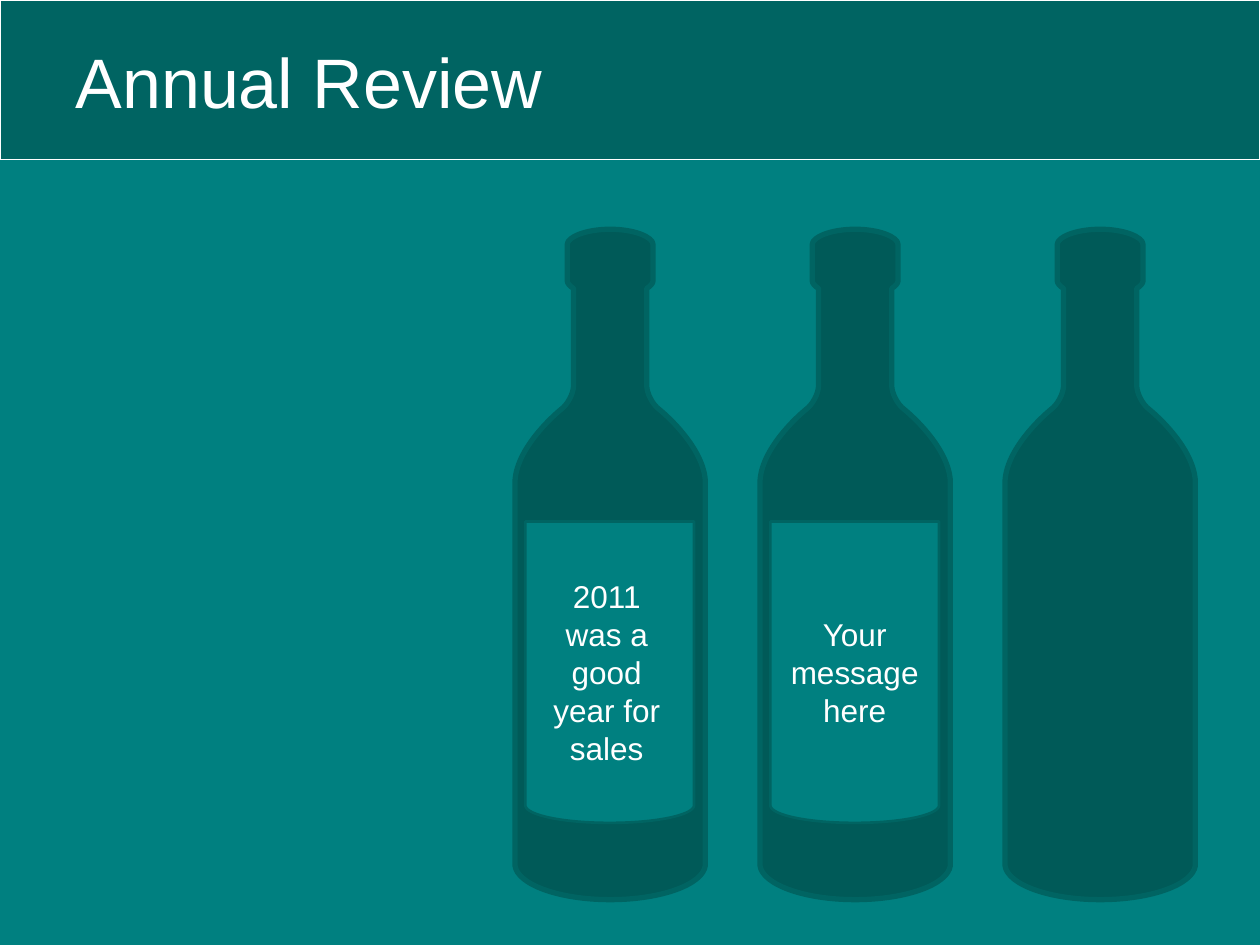
from lxml import etree
from pptx import Presentation
from pptx.dml.color import RGBColor
from pptx.enum import shapes, text
from pptx.oxml.ns import qn
from pptx.util import Pt

TEAL = RGBColor(0x00, 0x80, 0x80)
BAND = RGBColor(0x00, 0x64, 0x62)
GLASS = RGBColor(0x00, 0x5A, 0x58)
WHITE = RGBColor(0xFF, 0xFF, 0xFF)

# Right halves, as (distance from axis, y): one point is a line, three are a curve.
BOTTLE = [
    [(0, 131)],
    [(13.7, 131), (24.5, 135.4), (24.5, 139.7)],
    [(24.5, 160.5)],
    [(24.5, 162), (23, 163.5), (20.9, 164.9)],
    [(20.9, 220.3)],
    [(20.9, 224.6), (24.1, 231.1), (28.1, 234)],
    [(28.1, 234), (53.3, 254.2), (54.4, 275)],
    [(54.4, 494.6)],
    [(53, 505.4), (29.2, 514.1), (0, 514.1)],
]
LABEL = [
    [(0, 298)],
    [(48.2, 298)],
    [(48.2, 460.4)],
    [(47.5, 465.8), (26.6, 470.2), (0, 470.2)],
]
FIRST_AXIS, AXIS_STEP = 348.7, 140


def add_symmetric(page, axis, half, fill, line_width):
    """Draw the outline made of a right half and its mirror image."""
    mirrored = []
    for before, segment in reversed(list(zip(half, half[1:]))):
        back = [*reversed(segment[:-1]), before[-1]]
        mirrored.append([(-x, y) for x, y in back])
    segments = [[(Pt(axis + x), Pt(y)) for x, y in segment]
                for segment in half + mirrored]
    ends = [segment[-1] for segment in segments]
    builder = page.shapes.build_freeform(*ends[0])
    builder.add_line_segments(ends[1:], close=True)
    shape = builder.convert_to_shape()

    # Turn the straight steps with control points into Bezier curves
    steps = list(shape._element.iter(qn("a:lnTo")))
    for step, segment in zip(steps, segments[1:]):
        if len(segment) == 3:
            curve = etree.Element(qn("a:cubicBezTo"))
            for x, y in segment:
                etree.SubElement(curve, qn("a:pt"),
                                 x=str(x - shape.left), y=str(y - shape.top))
            step.getparent().replace(step, curve)

    shape.shadow.inherit = False
    shape.fill.solid()
    shape.fill.fore_color.rgb = fill
    shape.line.color.rgb = BAND
    shape.line.width = Pt(line_width)


def write(frame, words, size, align):
    frame.word_wrap = True
    frame.vertical_anchor = text.MSO_ANCHOR.MIDDLE
    para = frame.paragraphs[0]
    para.alignment = align
    span = para.add_run()
    span.text = words
    for name, value in {"name": "Arial", "size": Pt(size)}.items():
        setattr(span.font, name, value)
    span.font.color.rgb = WHITE


deck = Presentation()
deck.slide_width, deck.slide_height = Pt(720), Pt(540)
page = deck.slides.add_slide(deck.slide_layouts[5])
page.background.fill.solid()
page.background.fill.fore_color.rgb = TEAL

# Header band, which belongs to the master
band = page.shapes.add_shape(shapes.MSO_SHAPE.RECTANGLE, 0, 0, Pt(720), Pt(91.4))
band.shadow.inherit = False
band.fill.solid()
band.fill.fore_color.rgb = BAND
band.line.color.rgb = WHITE
band.line.width = Pt(0.75)
deck.slide_master.shapes._spTree.insert(2, band._element)

title = page.shapes.title
frame_box = {"left": 36, "top": 14.8, "width": 638.6, "height": 62.6}
for name, value in frame_box.items():
    setattr(title, name, Pt(value))
write(title.text_frame, "Annual Review", 40, text.PP_ALIGN.LEFT)

# Bottles by column; the right one is at the back and has no label
bottles = [
    (2, None),
    (0, ("2011 was a good year for sales", 303.1, 87.1)),
    (1, ("Your message here", 443.4, 90)),
]
for column, message in bottles:
    axis = FIRST_AXIS + column * AXIS_STEP
    add_symmetric(page, axis, BOTTLE, GLASS, 3)
    if message is None:
        continue
    add_symmetric(page, axis - 0.3, LABEL, TEAL, 1.5)
    words, left, width = message
    box = page.shapes.add_shape(shapes.MSO_SHAPE.RECTANGLE,
                                Pt(left), Pt(306.9), Pt(width), Pt(154.1))
    box.shadow.inherit = False
    box.fill.solid()
    box.fill.fore_color.rgb = TEAL
    box.line.fill.background()
    write(box.text_frame, words, 18, text.PP_ALIGN.CENTER)

deck.save("out.pptx")
